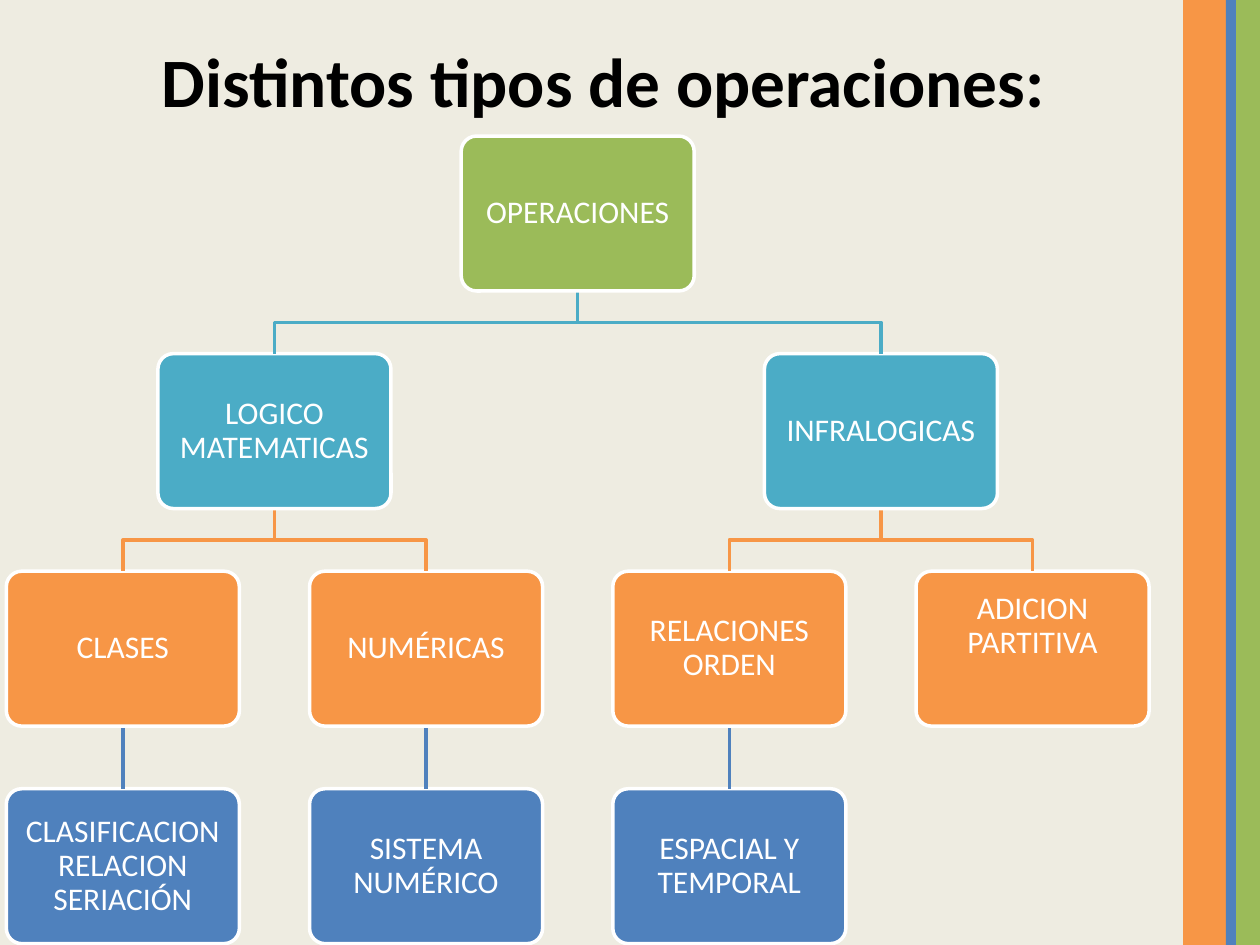
from dataclasses import dataclass, field

from lxml import etree
from pptx import Presentation
from pptx import util as u
from pptx.dml.color import RGBColor
from pptx.enum import shapes, text
from pptx.oxml import ns


@dataclass(frozen=True)
class Theme:
    font: str = "Calibri"
    background: RGBColor = RGBColor(0xEE, 0xEC, 0xE1)
    ink: RGBColor = RGBColor(0, 0, 0)
    white: RGBColor = RGBColor(255, 255, 255)
    green: RGBColor = RGBColor(0x9B, 0xBB, 0x59)
    teal: RGBColor = RGBColor(0x4B, 0xAC, 0xC6)
    orange: RGBColor = RGBColor(0xF7, 0x96, 0x46)
    blue: RGBColor = RGBColor(0x4F, 0x81, 0xBD)
    title_size: u.Pt = u.Pt(39.6)
    node_size: u.Pt = u.Pt(18)
    line_width: u.Pt = u.Pt(2)


@dataclass
class Operation:
    label: str
    children: list = field(default_factory=list)
    bottom_inset: float = 0.07


@dataclass(frozen=True)
class Box:
    left: float
    top: float
    width: float
    height: float

    def lengths(self):
        return [u.Inches(v) for v in (self.left, self.top, self.width, self.height)]


THEME = Theme()
LEVEL_COLORS = (THEME.green, THEME.teal, THEME.orange, THEME.blue)
NODE_WIDTH, NODE_HEIGHT = 1.85, 1.23

OPERATIONS = Operation("OPERACIONES", [
    Operation("LOGICO MATEMATICAS", [
        Operation("CLASES", [Operation("CLASIFICACION RELACION SERIACIÓN")]),
        Operation("NUMÉRICAS", [Operation("SISTEMA NUMÉRICO")]),
    ]),
    Operation("INFRALOGICAS", [
        Operation("RELACIONES ORDEN", [Operation("ESPACIAL Y TEMPORAL")]),
        Operation("ADICION PARTITIVA", bottom_inset=0.42),
    ]),
])


def leaf_count(operation):
    return sum(map(leaf_count, operation.children)) or 1


def depth(operation):
    return 1 + max(map(depth, operation.children), default=0)


def add_stripes(slide, box):
    stripes = ((0, 0.35, THEME.orange), (0.42, 0.19, THEME.green), (0.34, 0.08, THEME.blue))
    for offset, width, color in stripes:
        stripe_box = Box(box.left + offset, box.top, width, box.height)
        stripe = slide.shapes.add_shape(shapes.MSO_SHAPE.RECTANGLE, *stripe_box.lengths())
        stripe.shadow.inherit = False
        stripe.fill.solid()
        stripe.fill.fore_color.rgb = color
        stripe.line.fill.background()


def add_title(slide, box):
    frame = slide.shapes.add_textbox(*box.lengths()).text_frame
    frame.word_wrap = True
    frame.margin_top = 0
    title = frame.paragraphs[0]
    title.text = "Distintos tipos de operaciones:"
    title.alignment = text.PP_ALIGN.CENTER
    title.font.name = THEME.font
    title.font.size = THEME.title_size
    title.font.bold = True
    title.font.color.rgb = THEME.ink


def add_node(slide, box, operation, color):
    node = slide.shapes.add_shape(shapes.MSO_SHAPE.ROUNDED_RECTANGLE, *box.lengths())
    node.adjustments[0] = 0.1
    node.shadow.inherit = False
    node.fill.solid()
    node.fill.fore_color.rgb = color
    node.line.color.rgb = THEME.white
    node.line.width = THEME.line_width
    frame = node.text_frame
    frame.word_wrap = True
    frame.vertical_anchor = text.MSO_ANCHOR.MIDDLE
    frame.margin_left = frame.margin_right = frame.margin_top = u.Inches(0.07)
    frame.margin_bottom = u.Inches(operation.bottom_inset)
    label = frame.paragraphs[0]
    label.text = operation.label
    label.alignment = text.PP_ALIGN.CENTER
    label.line_spacing = 0.9
    label.font.name = THEME.font
    label.font.size = THEME.node_size
    label.font.color.rgb = THEME.white


def add_branch(slide, start, end, color):
    (x1, y1), (x2, y2) = [(u.Inches(x), u.Inches(y)) for x, y in (start, end)]
    if abs(x1 - x2) < u.Inches(0.01):
        branch = slide.shapes.add_connector(shapes.MSO_CONNECTOR.STRAIGHT, x1, y1, x1, y2)
        etree.SubElement(branch.element.spPr, ns.qn("a:effectLst"))
    else:
        middle = (y1 + y2) // 2
        elbow = slide.shapes.build_freeform(x1, y1)
        elbow.add_line_segments([(x1, middle), (x2, middle), (x2, y2)], close=False)
        branch = elbow.convert_to_shape()
        branch.shadow.inherit = False
        branch.fill.background()
    branch.line.color.rgb = color
    branch.line.width = THEME.line_width


def add_operation_tree(slide, box, root):
    column_step = (box.width - NODE_WIDTH) / (leaf_count(root) - 1)
    row_step = (box.height - NODE_HEIGHT) / (depth(root) - 1)

    def place(operation, first_column, level):
        top = box.top + level * row_step
        centers = []
        column = first_column
        for child in operation.children:
            centers.append(place(child, column, level + 1))
            column += leaf_count(child)
        if centers:
            center = (centers[0] + centers[-1]) / 2
        else:
            center = box.left + NODE_WIDTH / 2 + first_column * column_step
        for child_center in centers:
            add_branch(slide, (center, top + NODE_HEIGHT),
                       (child_center, top + row_step), LEVEL_COLORS[level + 1])
        node_box = Box(center - NODE_WIDTH / 2, top, NODE_WIDTH, NODE_HEIGHT)
        add_node(slide, node_box, operation, LEVEL_COLORS[level])
        return center

    place(root, 0, 0)


def main():
    deck = Presentation()
    deck.slide_width, deck.slide_height = u.Inches(10), u.Inches(7.5)
    slide = deck.slides.add_slide(deck.slide_layouts[6])
    slide.background.fill.solid()
    slide.background.fill.fore_color.rgb = THEME.background
    add_stripes(slide, Box(9.39, 0, 0.61, 7.5))
    add_title(slide, Box(0.5, 0.3, 8.58, 1.25))
    add_operation_tree(slide, Box(0.05, 1.08, 9.07, 6.41), OPERATIONS)
    deck.save("out.pptx")


if __name__ == "__main__":
    main()
